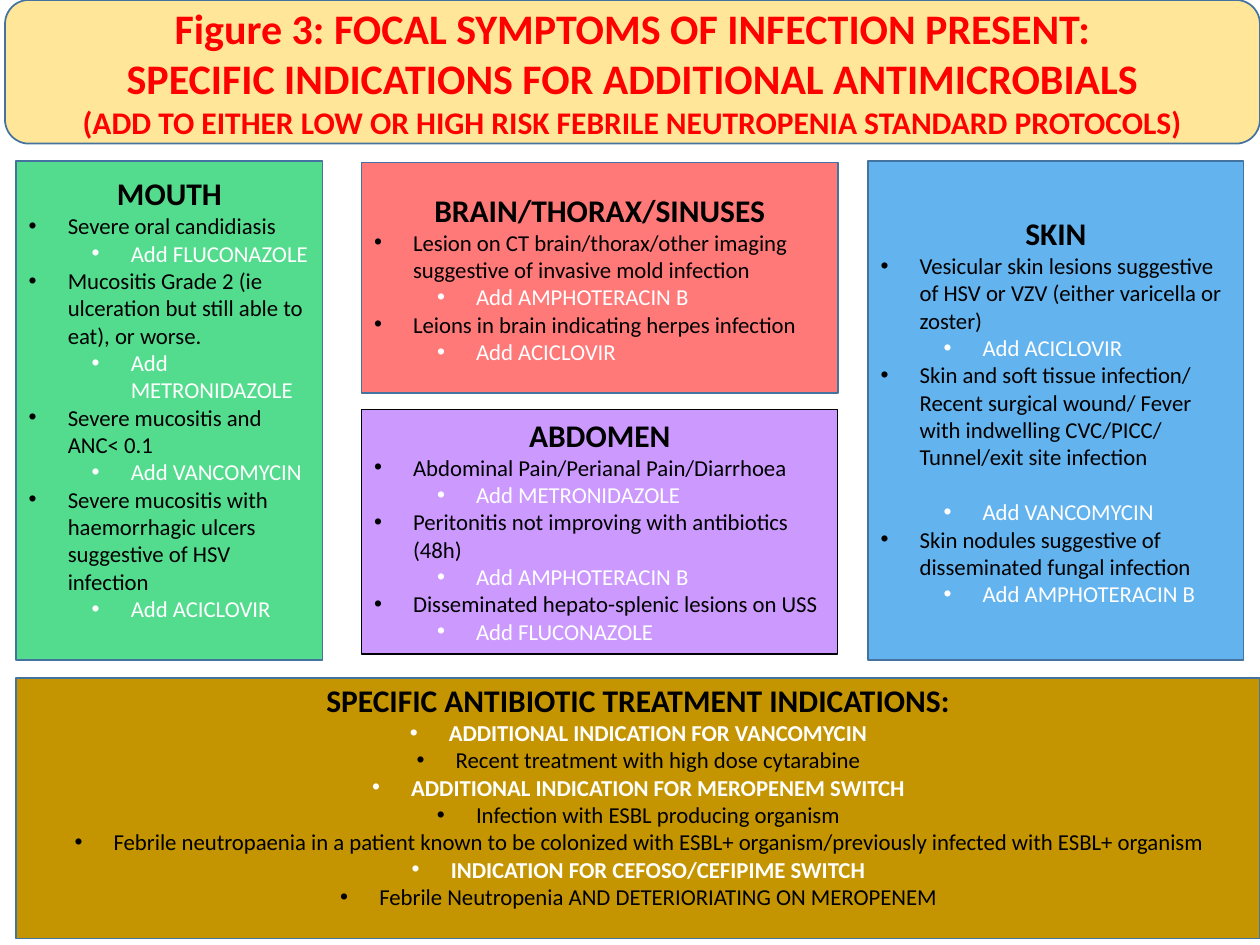
from lxml import etree
from pptx import Presentation
from pptx.dml.color import RGBColor
from pptx.enum.shapes import MSO_SHAPE
from pptx.enum.text import MSO_ANCHOR, PP_ALIGN
from pptx.oxml.ns import qn
from pptx.util import Inches, Pt

BLACK, WHITE, RED, BLUE = "000000", "FFFFFF", "FF0000", "43739E"


def paint(target, colour):
    target.rgb = RGBColor.from_string(colour)


def add_line(frame, text, size, colour, bold, align, level=0, bullet=False):
    para = frame.paragraphs[0]
    if para.runs:
        para = frame.add_paragraph()
    para.alignment = align
    para.level = level
    if bullet:
        properties = para._p.get_or_add_pPr()
        properties.set("marL", str(Inches(0.31 + 0.5 * level)))
        properties.set("indent", str(Inches(-0.31)))
        font = etree.SubElement(properties, qn("a:buFont"))
        font.set("typeface", "Arial")
        etree.SubElement(properties, qn("a:buChar")).set("char", "•")
    span = para.add_run()
    span.text = text
    span.font.name = "Calibri"
    span.font.size = Pt(size)
    span.font.bold = bold
    paint(span.font.color, colour)
    return para


styles = {
    "title": (24, RED, True, PP_ALIGN.CENTER),
    "subtitle": (18, RED, True, PP_ALIGN.CENTER),
    "heading": (18, BLACK, True, PP_ALIGN.CENTER),
    "finding": (13, BLACK, False, PP_ALIGN.LEFT, 0, True),
    "drug": (13, WHITE, False, PP_ALIGN.LEFT, 1, True),
    "indication": (13, WHITE, True, PP_ALIGN.CENTER, 0, True),
    "detail": (13, BLACK, False, PP_ALIGN.CENTER, 0, True),
}

panels = [
    ((0.13, 5.38, 9.87, 2.07), MSO_SHAPE.RECTANGLE, "C49500", BLUE, 1, MSO_ANCHOR.MIDDLE, 0.25, [
        ("heading", "SPECIFIC ANTIBIOTIC TREATMENT INDICATIONS:"),
        ("indication", "ADDITIONAL INDICATION FOR VANCOMYCIN"),
        ("detail", "Recent treatment with high dose cytarabine"),
        ("indication", "ADDITIONAL INDICATION FOR MEROPENEM SWITCH"),
        ("detail", "Infection with ESBL producing organism"),
        ("detail", "Febrile neutropaenia in a patient known to be colonized with "
                   "ESBL+ organism/previously infected with ESBL+ organism"),
        ("indication", "INDICATION FOR CEFOSO/CEFIPIME SWITCH"),
        ("detail", "Febrile Neutropenia AND DETERIORIATING ON MEROPENEM"),
    ]),
    ((0.13, 1.28, 2.43, 3.96), MSO_SHAPE.RECTANGLE, "54DC8E", BLUE, 1, MSO_ANCHOR.MIDDLE, 0.25, [
        ("heading", "MOUTH"),
        ("finding", "Severe oral candidiasis"),
        ("drug", "Add FLUCONAZOLE"),
        ("finding", "Mucositis Grade 2 (ie ulceration but still able to eat), or worse."),
        ("drug", "Add METRONIDAZOLE"),
        ("finding", "Severe mucositis and ANC< 0.1"),
        ("drug", "Add VANCOMYCIN"),
        ("finding", "Severe mucositis with haemorrhagic ulcers suggestive of HSV infection"),
        ("drug", "Add ACICLOVIR"),
    ]),
    ((2.87, 1.29, 3.78, 1.83), MSO_SHAPE.RECTANGLE, "FF7979", BLUE, 1, MSO_ANCHOR.MIDDLE, 0.05, [
        ("heading", "BRAIN/THORAX/SINUSES"),
        ("finding", "Lesion on CT brain/thorax/other imaging suggestive of invasive mold infection"),
        ("drug", "Add AMPHOTERACIN B"),
        ("finding", "Leions in brain indicating herpes infection"),
        ("drug", "Add ACICLOVIR"),
    ]),
    ((6.89, 1.28, 2.98, 3.96), MSO_SHAPE.RECTANGLE, "63B3EF", BLUE, 1, MSO_ANCHOR.MIDDLE, 0.05, [
        ("heading", "SKIN"),
        ("finding", "Vesicular skin lesions suggestive of HSV or VZV (either varicella or zoster)"),
        ("drug", "Add ACICLOVIR"),
        ("finding", "Skin and soft tissue infection/ Recent surgical wound/ Fever "
                    "with indwelling CVC/PICC/ Tunnel/exit site infection", 0.22),
        ("drug", "Add VANCOMYCIN"),
        ("finding", "Skin nodules suggestive of disseminated fungal infection"),
        ("drug", "Add AMPHOTERACIN B"),
    ]),
    ((0.04, 0, 9.96, 1.14), MSO_SHAPE.ROUNDED_RECTANGLE, "FFE699", BLUE, 1, MSO_ANCHOR.MIDDLE, 0.05, [
        ("title", "Figure 3: FOCAL SYMPTOMS OF INFECTION PRESENT:"),
        ("title", "SPECIFIC INDICATIONS FOR ADDITIONAL ANTIMICROBIALS"),
        ("subtitle", "(ADD TO EITHER LOW OR HIGH RISK FEBRILE NEUTROPENIA STANDARD PROTOCOLS)"),
    ]),
    ((2.87, 3.25, 3.78, 1.94), MSO_SHAPE.RECTANGLE, "CC99FF", BLACK, 0.75, MSO_ANCHOR.TOP, 0.05, [
        ("heading", "ABDOMEN"),
        ("finding", "Abdominal Pain/Perianal Pain/Diarrhoea"),
        ("drug", "Add METRONIDAZOLE"),
        ("finding", "Peritonitis not improving with antibiotics (48h)"),
        ("drug", "Add AMPHOTERACIN B"),
        ("finding", "Disseminated hepato-splenic lesions on USS"),
        ("drug", "Add FLUCONAZOLE"),
    ]),
]

deck = Presentation()
deck.slide_width = Inches(10)
deck.slide_height = Inches(7.5)
page = deck.slides.add_slide(deck.slide_layouts[6])

for place, kind, fill, border, weight, anchor, bottom, lines in panels:
    box = page.shapes.add_shape(kind, *[Inches(length) for length in place])
    box.shadow.inherit = False
    box.fill.solid()
    paint(box.fill.fore_color, fill)
    paint(box.line.color, border)
    box.line.width = Pt(weight)
    frame = box.text_frame
    frame.word_wrap = True
    frame.vertical_anchor = anchor
    frame.margin_bottom = Inches(bottom)
    for style, text, *gap in lines:
        para = add_line(frame, text, *styles[style])
        if gap:
            para.space_after = Inches(gap[0])

deck.save("out.pptx")
